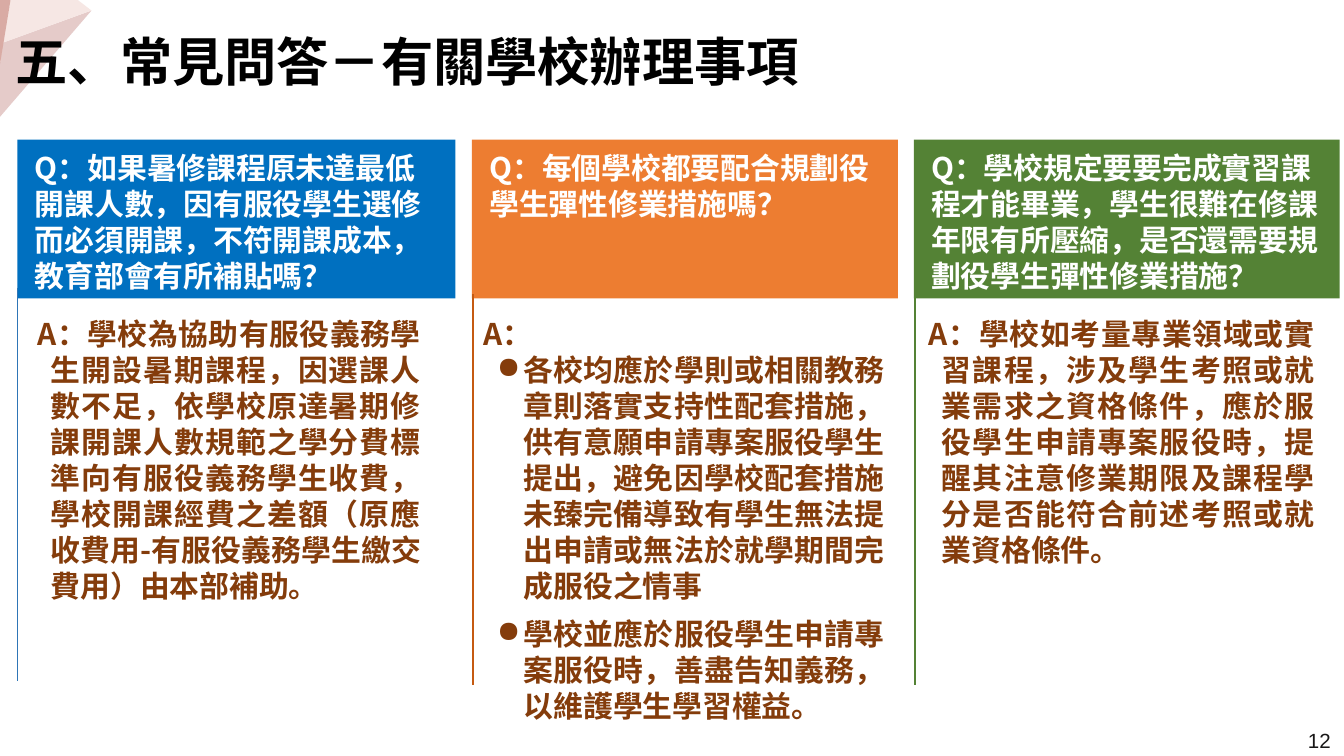
from dataclasses import dataclass

from lxml import etree
from pptx import Presentation
from pptx import util as u
from pptx.dml.color import RGBColor
from pptx.enum import shapes, text
from pptx.oxml import ns

COLORS = {
    "black": "000000", "white": "FFFFFF", "brown": "843C0B", "page": "181717",
    "blue": "0070C0", "blue line": "2E75B6",
    "orange": "ED7D31", "orange line": "C55A11", "green": "548235",
    "rose": "E5CBC9", "pale rose": "F6E7E4", "deep rose": "D9ABA4",
}
CJK = "Noto Sans CJK SC"
HEADER_TOP, HEADER_HEIGHT, ANSWER_TOP = 2.64, 3.0, 5.84


@dataclass
class Answer:
    text: str
    indent: float = 0
    hanging: float = 0
    bullet: bool = False
    space_before: float = 0


@dataclass
class Column:
    """One question with its rule and answer; lengths in centimetres."""
    left: float
    width: float
    fill: str
    question: str
    rule: tuple[float, float, float]  # x, top, bottom
    rule_color: str
    answer_box: tuple[float, float, float]  # left, width, height
    answers: list[Answer]


COLUMNS = [
    Column(0.33, 8.28, "blue",
           "Q：如果暑修課程原未達最低開課人數，因有服役學生選修而必須開課，不符開課成本，教育部會有所補貼嗎？",
           (0.33, 5.44, 12.88), "blue line", (0.46, 7.75, 5.74),
           [Answer("A：學校為協助有服役義務學生開設暑期課程，因選課人數不足，依學校原達暑期修課開課人數規範之學分費標準向有服役義務學生收費，學校開課經費之差額（原應收費用-有服役義務學生繳交費用）由本部補助。", 0.25, 0.25)]),
    Column(8.92, 8.05, "orange", "Q：每個學校都要配合規劃役學生彈性修業措施嗎？",
           (8.94, 5.56, 12.95), "orange line", (8.89, 8.08, 8.0),
           [Answer("A："),
            Answer("各校均應於學則或相關教務章則落實支持性配套措施，供有意願申請專案服役學生提出，避免因學校配套措施未臻完備導致有學生無法提出申請或無法於就學期間完成服役之情事", 0.76, 0.51, True),
            Answer("學校並應於服役學生申請專案服役時，善盡告知義務，以維護學生學習權益。", 0.76, 0.51, True, 6)]),
    Column(17.27, 8.05, "green",
           "Q：學校規定要要完成實習課程才能畢業，學生很難在修課年限有所壓縮，是否還需要規劃役學生彈性修業措施？",
           (17.3, 5.54, 12.95), "green", (17.3, 7.8, 5.05),
           [Answer("A：學校如考量專業領域或實習課程，涉及學生考照或就業需求之資格條件，應於服役學生申請專案服役時，提醒其注意修業期限及課程學分是否能符合前述考照或就業資格條件。", 0.25, 0.25)]),
]

# Corner facets as fill and points in centimetres
FACETS = [
    ("rose", [(1.73, 0.2), (0.05, 0.81), (0, 1.22), (0, 2.21)]),
    ("pale rose", [(1.73, 0.2), (1.47, 0), (0.2, 0), (0.05, 0.81)]),
    ("deep rose", [(0.2, 0), (0, 0), (0, 1.22)]),
]


def rgb(name: str) -> RGBColor:
    return RGBColor.from_string(COLORS[name])


def style(para, size: float, color: str, name: str = CJK, bold: bool = True) -> None:
    font = para.font
    font.size, font.bold, font.name = u.Pt(size), bold, name
    font.color.rgb = rgb(color)
    properties = para._p.pPr.find(ns.qn("a:defRPr"))
    etree.SubElement(properties, ns.qn("a:ea"), typeface=name)


def paint(shape, color: str) -> None:
    shape.shadow.inherit = False
    shape.fill.solid()
    shape.fill.fore_color.rgb = rgb(color)
    shape.line.fill.background()


def add_text_box(page, left: float, top: float, width: float, height: float):
    box = page.shapes.add_textbox(u.Cm(left), u.Cm(top), u.Cm(width), u.Cm(height))
    box.text_frame.word_wrap = True
    return box.text_frame


def add_facet(page, color: str, points: list[tuple[float, float]]) -> None:
    corners = [(u.Cm(x), u.Cm(y)) for x, y in points]
    builder = page.shapes.build_freeform(*corners[0])
    builder.add_line_segments(corners[1:], close=True)
    paint(builder.convert_to_shape(), color)


def add_question(page, column: Column) -> None:
    box = page.shapes.add_shape(
        shapes.MSO_SHAPE.RECTANGLE, u.Cm(column.left), u.Cm(HEADER_TOP),
        u.Cm(column.width), u.Cm(HEADER_HEIGHT))
    paint(box, column.fill)
    frame = box.text_frame
    frame.word_wrap = True
    frame.vertical_anchor = text.MSO_ANCHOR.TOP
    frame.margin_left = frame.margin_right = u.Cm(0.33)
    frame.margin_top = frame.margin_bottom = u.Cm(0.18)
    para = frame.paragraphs[0]
    para.text = column.question
    para.alignment = text.PP_ALIGN.LEFT
    para.line_spacing = u.Pt(19.3)
    style(para, 16, "white")


def add_rule(page, column: Column) -> None:
    x, top, bottom = column.rule
    rule = page.shapes.add_connector(
        shapes.MSO_CONNECTOR.STRAIGHT, u.Cm(x), u.Cm(top), u.Cm(x), u.Cm(bottom))
    rule.line.color.rgb = rgb(column.rule_color)
    rule.line.width = u.Pt(1)
    etree.SubElement(rule._element.spPr, ns.qn("a:effectLst"))


def add_answers(page, column: Column) -> None:
    left, width, height = column.answer_box
    frame = add_text_box(page, left, ANSWER_TOP, width, height)
    for index, answer in enumerate(column.answers):
        para = frame.add_paragraph() if index else frame.paragraphs[0]
        para.text = answer.text
        para.alignment = text.PP_ALIGN.JUSTIFY
        para.line_spacing = u.Pt(19.3)
        if answer.space_before:
            para.space_before = u.Pt(answer.space_before)
        properties = para._p.get_or_add_pPr()
        properties.set("marL", str(u.Cm(answer.indent)))
        properties.set("indent", str(-u.Cm(answer.hanging)))
        if answer.bullet:
            etree.SubElement(properties, ns.qn("a:buChar"), char="●")
        style(para, 16, "brown")


def main() -> None:
    deck = Presentation()
    deck.slide_width, deck.slide_height = u.Cm(25.4), u.Cm(14.29)
    page = deck.slides.add_slide(deck.slide_layouts[6])

    number = add_text_box(page, 19.69, 13.61, 5.71, 0.76)
    number.vertical_anchor = text.MSO_ANCHOR.MIDDLE
    para = number.paragraphs[0]
    para.text = "12"
    para.alignment = text.PP_ALIGN.RIGHT
    style(para, 11, "page", "Arial", False)

    for color, points in FACETS:
        add_facet(page, color, points)

    title = add_text_box(page, 0.05, 0.38, 24.99, 1.65)
    title.vertical_anchor = text.MSO_ANCHOR.MIDDLE
    para = title.paragraphs[0]
    para.text = "五、常見問答－有關學校辦理事項"
    para.line_spacing = u.Pt(30)
    style(para, 28, "black")

    for column in COLUMNS:
        add_question(page, column)
        add_rule(page, column)
        add_answers(page, column)

    deck.save("out.pptx")


if __name__ == "__main__":
    main()
